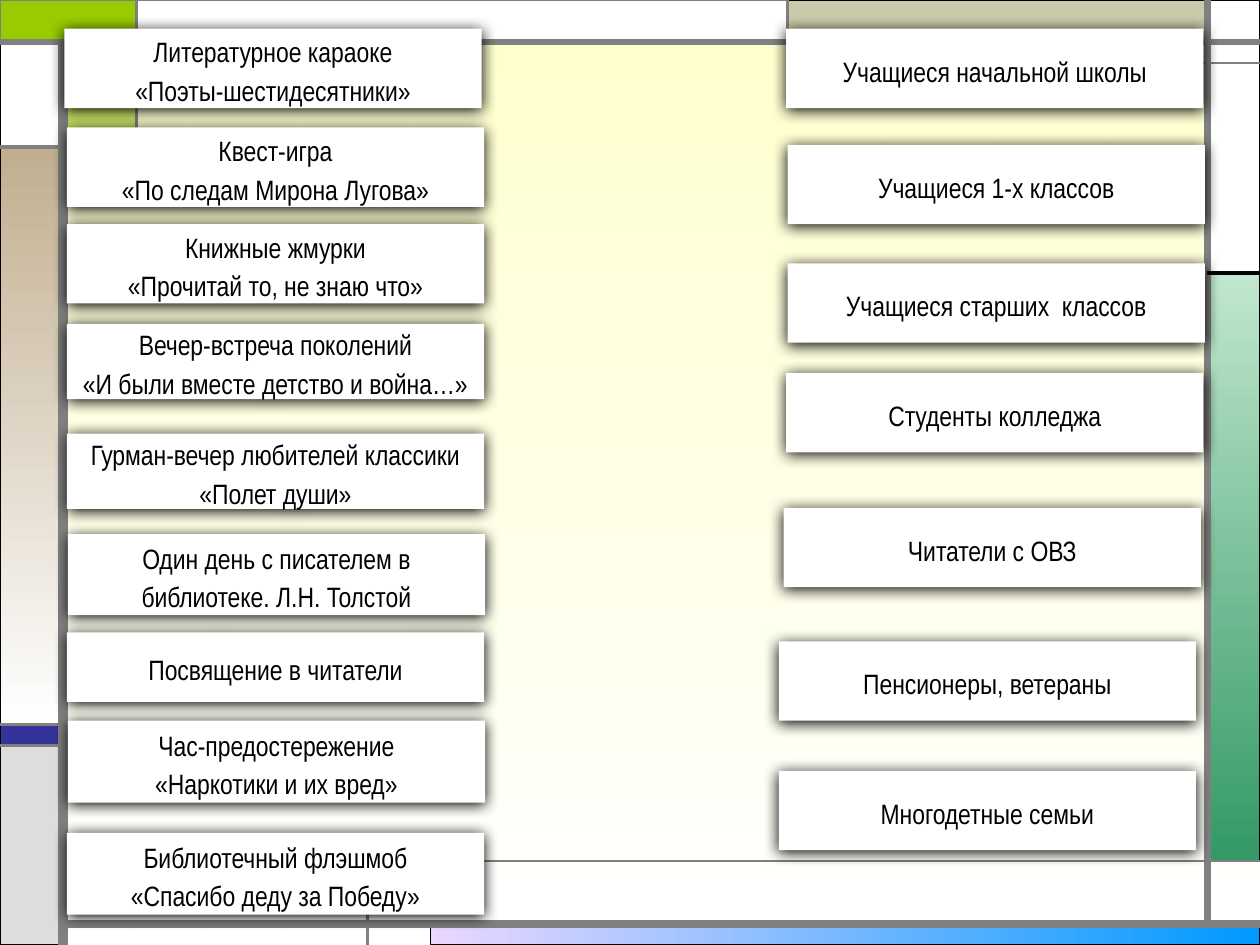
from lxml.etree import SubElement
from pptx import Presentation
from pptx.dml.color import RGBColor
from pptx.enum.shapes import MSO_CONNECTOR, MSO_SHAPE
from pptx.enum.text import MSO_ANCHOR, PP_ALIGN
from pptx.oxml.ns import qn
from pptx.util import Cm, Pt

HUES = {
    "white": "FFFFFF", "black": "000000", "gray": "808080", "pale": "DDDDDD",
    "cream": "FFFFCC", "lime": "99CC00", "navy": "333399", "olive": "CAC9AA",
    "tan": "C1AE8F", "mint": "C1E7CE", "green": "339966",
    "lilac": "EBD7FF", "blue": "0099FF",
}
FONT = "Arial Narrow"
UNIT = 2.54 / 12  # the frame sits on a grid of twelve steps to the inch
WIDE = 8.41       # width of every card, cm

# Frame panels: left, top, width, height in grid steps; fill; line; weight
# A fill is a hue, or two hues and an angle
PANELS = [
    (41, 88, 79, 2, ("lilac", "blue", 0), "black", 0.75),
    (115, 26, 5, 56, ("mint", "green", 90), "black", 0.75),
    (0, 69, 6, 2, "navy", "black", 0.75),
    (0, 71, 6, 19, "pale", "black", 0.75),
    (115, 0, 5, 26, "white", "black", 0.75),
    (75, 0, 40, 4, "olive", "black", 0.75),
    (6, 4, 7, 10, "lime", "black", 0.75),
    (0, 14, 6, 55, ("tan", "white", 90), "black", 0.75),
    (0, 4, 6, 10, "white", "black", 0.75),
    (0, 0, 13, 4, "lime", "gray", 1.5),
    (13, 0, 62, 4, "white", "gray", 0.75),
]
CLEAR = 6  # index of the half transparent panel

# Frame rules: from x, y to x, y in grid steps; hue; weight
RULES = [
    (6, 90, 6, 4, "gray", 6),
    (6, 88, 120, 88, "gray", 4.5),
    (115, 88, 115, 0, "gray", 4.5),
    (0, 4, 120, 4, "gray", 3),
    (120, 6, 75, 6, "gray", 1.5),
    (75, 6, 75, 0, "gray", 1.5),
    (115, 26, 120, 26, "black", 2.25),
    (13, 0, 13, 14, "gray", 1.5),
    (13, 14, 0, 14, "gray", 2.25),
    (35, 90, 35, 82, "gray", 1.5),
    (35, 82, 120, 82, "gray", 1.5),
    (6, 69, 0, 69, "gray", 2.25),
    (6, 71, 0, 71, "gray", 2.25),
]

# Cards: left, top, height in cm; paragraphs
EVENTS = [
    (1.3, 0.58, 1.6, ["Литературное караоке", "«Поэты-шестидесятники»"]),
    (1.35, 2.57, 1.6, ["Квест-игра", "«По следам Мирона Лугова»"]),
    (1.35, 4.52, 1.6, ["Книжные жмурки", "«Прочитай то, не знаю что»"]),
    (1.35, 6.53, 1.52, ["Вечер-встреча поколений",
                        "«И были вместе детство и война…»"]),
    (1.35, 8.74, 1.52, ["Гурман-вечер любителей классики «Полет души»"]),
    (1.37, 10.77, 1.63, ["Один день с писателем в библиотеке. Л.Н. Толстой"]),
    (1.35, 12.75, 1.4, ["Посвящение в читатели"]),
    (1.37, 14.53, 1.65, ["Час-предостережение", "«Наркотики и их вред»"]),
    (1.35, 16.79, 1.65, ["Библиотечный флэшмоб", "«Спасибо деду за Победу»"]),
]
GROUPS = [
    (15.85, 0.58, 1.6, ["Учащиеся начальной школы"]),
    (15.88, 2.92, 1.6, ["Учащиеся 1-х классов"]),
    (15.88, 5.31, 1.6, ["Учащиеся старших  классов"]),
    (15.85, 7.52, 1.6, ["Студенты колледжа"]),
    (15.8, 10.24, 1.6, ["Читатели с ОВЗ"]),
    (15.7, 12.93, 1.6, ["Пенсионеры, ветераны"]),
    (15.7, 15.54, 1.6, ["Многодетные семьи"]),
]


def rgb(hue):
    return RGBColor.from_string(HUES[hue])


def grid(*steps):
    return [Cm(step * UNIT) for step in steps]


def paint(fill, tint):
    if isinstance(tint, str):
        fill.solid()
        fill.fore_color.rgb = rgb(tint)
        return
    *ends, turn = tint
    fill.gradient()
    fill.gradient_angle = (360 - turn) % 360
    for stop, hue in zip(fill.gradient_stops, ends):
        stop.color.rgb = rgb(hue)


def add_box(slide, spot, tint):
    box = slide.shapes.add_shape(MSO_SHAPE.RECTANGLE, *spot)
    box.shadow.inherit = False
    paint(box.fill, tint)
    return box


def add_alpha(color, part):
    SubElement(color, qn("a:alpha"), val=str(part * 1000))


def add_panel(slide, spot, tint, hue, weight):
    box = add_box(slide, grid(*spot), tint)
    box.line.color.rgb = rgb(hue)
    box.line.width = Pt(weight)
    return box


def add_rule(slide, ends, hue, weight):
    rule = slide.shapes.add_connector(MSO_CONNECTOR.STRAIGHT, *grid(*ends))
    rule.line.color.rgb = rgb(hue)
    rule.line.width = Pt(weight)
    SubElement(rule._element.spPr, qn("a:effectLst"))


def add_card(slide, left, top, high, paras):
    box = add_box(slide, [Cm(n) for n in (left, top, WIDE, high)], "white")
    box.line.fill.background()
    # Soft shadow
    glow = SubElement(box._element.spPr.find(qn("a:effectLst")),
                      qn("a:outerShdw"), blurRad=str(Pt(8.5)),
                      dist=str(Pt(1)), dir="5400000", algn="t",
                      rotWithShape="0")
    shade = SubElement(glow, qn("a:srgbClr"), val=HUES["black"])
    add_alpha(shade, 100)
    # Text
    frame = box.text_frame
    frame.word_wrap = True
    frame.vertical_anchor = MSO_ANCHOR.MIDDLE
    for i, text in enumerate(paras):
        para = frame.add_paragraph() if i else frame.paragraphs[0]
        para.alignment = PP_ALIGN.CENTER
        para.line_spacing = 1.15
        run = para.add_run()
        run.text = text
        run.font.name = FONT
        run.font.size = Pt(16)
        run.font.color.rgb = rgb("black")


def main():
    deck = Presentation()
    deck.slide_width, deck.slide_height = Cm(25.4), Cm(19.05)
    slide = deck.slides.add_slide(deck.slide_layouts[6])
    paint(slide.background.fill, ("cream", "white", 90))

    # Frame
    for i, (*spot, tint, hue, weight) in enumerate(PANELS):
        box = add_panel(slide, spot, tint, hue, weight)
        if i == CLEAR:
            fill = box._element.spPr.find(qn("a:solidFill"))
            add_alpha(fill[0], 50)
    for *ends, hue, weight in RULES:
        add_rule(slide, ends, hue, weight)

    # Events on the left, readers on the right
    for card in EVENTS + GROUPS:
        add_card(slide, *card)

    deck.save("out.pptx")


if __name__ == "__main__":
    main()
